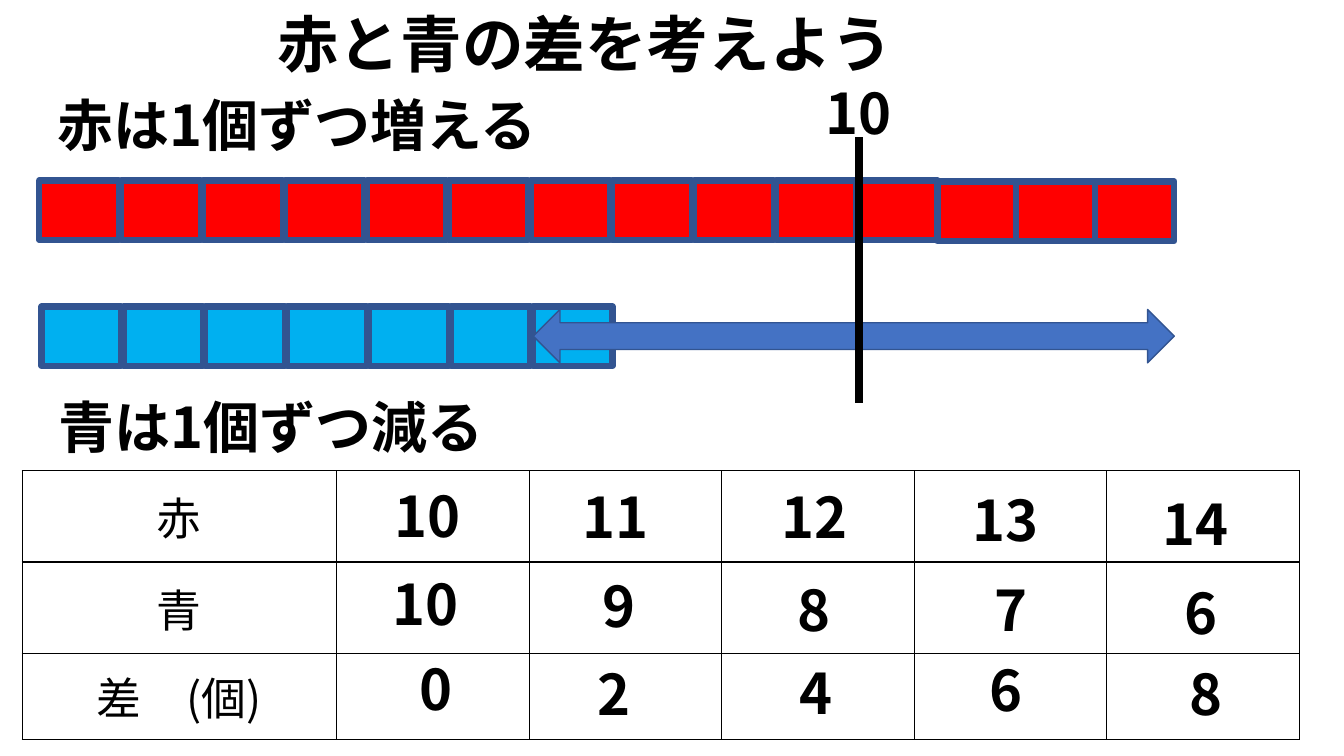
from dataclasses import dataclass

from lxml.etree import SubElement
from pptx import Presentation
from pptx.dml.color import RGBColor
from pptx.enum.shapes import MSO_CONNECTOR, MSO_SHAPE
from pptx.enum.text import MSO_ANCHOR, MSO_AUTO_SIZE, PP_ALIGN
from pptx.oxml.ns import qn
from pptx.slide import Slide
from pptx.text.text import TextFrame
from pptx.util import Emu, Inches, Pt


@dataclass(frozen=True)
class Theme:
    """Colours, font and type sizes of the slide."""
    font: str = "Noto Sans CJK JP"
    black: str = "000000"
    red: str = "FF0000"
    blue: str = "00B0F0"
    arrow: str = "4472C4"
    outline: str = "325491"
    title_size: int = 44
    label_size: int = 40
    table_size: int = 32
    tile_line: float = 4.5
    arrow_line: float = 1
    marker_line: float = 6
    table_line: float = 1


@dataclass(frozen=True)
class Box:
    """A frame in percent of the slide's width and height."""
    left: float
    top: float
    width: float
    height: float


@dataclass(frozen=True)
class Label:
    """Bold text with the place of its text box."""
    text: str
    left: float
    top: float
    width: float


@dataclass(frozen=True)
class TileRow:
    """A row of equally spaced tiles of one colour."""
    count: int
    left: float
    top: float
    pitch: float
    color: str


THEME = Theme()
WIDTH, HEIGHT = Inches(13.33), Inches(7.5)
TILE_WIDTH, TILE_HEIGHT = 5.93, 7.87
LABEL_HEIGHT = 10.27
TITLE = "赤と青の差を考えよう"
TITLE_BOX = Box(19.88, 0.13, 65.03, 11.2)
ARROW_BOX = Box(39.68, 40.93, 47.7, 7.07)
MARKER_LEFT, MARKER_TOP, MARKER_BOTTOM = 63.9, 18.13, 53.33
TABLE_LEFT, TABLE_TOP = 1.65, 62.27
TABLE_COLUMNS = [23.4] + [14.33] * 5
TABLE_ROWS = [12.08, 12.08, 11.38]
TABLE_HEADINGS = ["赤", "青", "差　(個)"]
TILE_ROWS = [
    TileRow(11, 2.93, 23.87, 6.09, THEME.red),
    TileRow(3, 69.75, 24, 5.85, THEME.red),
    TileRow(7, 3.1, 40.53, 6.09, THEME.blue),
]
LABELS = [
    Label("赤は1個ずつ増える", 3.53, 11.33, 44.7),
    Label("青は1個ずつ減る", 3.6, 51.2, 44.7),
    Label("10", 60.68, 9.73, 8.55),
    Label("10", 28.65, 63.07, 8.55),
    Label("11", 42.6, 63.2, 6.53),
    Label("12", 57.38, 63.2, 6.83),
    Label("13", 71.63, 63.6, 6.83),
    Label("14", 85.73, 64.13, 6.83),
    Label("10", 28.43, 74.67, 8.55),
    Label("9", 44.1, 74.93, 4.43),
    Label("8", 58.58, 75.47, 4.43),
    Label("7", 73.28, 75.47, 4.43),
    Label("6", 87.38, 75.87, 4.43),
    Label("0", 30.45, 85.87, 6.53),
    Label("2", 43.73, 86.53, 6.53),
    Label("4", 58.73, 86.4, 6.53),
    Label("6", 72.9, 86, 6.53),
    Label("8", 87.75, 86.53, 6.53),
]


def across(share: float) -> Emu:
    """Turn percent of the slide's width into a length."""
    return Emu(round(WIDTH * share / 100))


def down(share: float) -> Emu:
    """Turn percent of the slide's height into a length."""
    return Emu(round(HEIGHT * share / 100))


def frame(box: Box) -> tuple[Emu, Emu, Emu, Emu]:
    """Return left, top, width and height as lengths."""
    return across(box.left), down(box.top), across(box.width), down(box.height)


def write(text_frame: TextFrame, text: str, *, size: float, bold: bool = False,
          align: PP_ALIGN = PP_ALIGN.LEFT) -> None:
    """Fill a text frame with one formatted paragraph."""
    para = text_frame.paragraphs[0]
    para.alignment = align
    para.line_spacing = 1.0
    span = para.add_run()
    span.text = text
    span.font.name = THEME.font
    span.font.size = Pt(size)
    span.font.bold = bold
    span.font.color.rgb = RGBColor.from_string(THEME.black)
    SubElement(span.font._element, qn("a:ea"), typeface=THEME.font)


def fit(text_frame: TextFrame) -> None:
    """Wrap text from the top and let its box grow."""
    text_frame.word_wrap = True
    text_frame.auto_size = MSO_AUTO_SIZE.SHAPE_TO_FIT_TEXT
    text_frame.vertical_anchor = MSO_ANCHOR.TOP


def add_title(page: Slide) -> None:
    """Place and format the title placeholder."""
    title = page.shapes.title
    title.left, title.top, title.width, title.height = frame(TITLE_BOX)
    fit(title.text_frame)
    write(title.text_frame, TITLE, size=THEME.title_size, bold=True)


def add_label(page: Slide, label: Label) -> None:
    """Draw one bold label."""
    place = Box(label.left, label.top, label.width, LABEL_HEIGHT)
    text_frame = page.shapes.add_textbox(*frame(place)).text_frame
    fit(text_frame)
    write(text_frame, label.text, size=THEME.label_size, bold=True)


def add_block(page: Slide, preset: MSO_SHAPE, box: Box, color: str, line: float) -> None:
    """Draw a filled and outlined preset shape."""
    block = page.shapes.add_shape(preset, *frame(box))
    block.shadow.inherit = False
    block.fill.solid()
    block.fill.fore_color.rgb = RGBColor.from_string(color)
    block.line.color.rgb = RGBColor.from_string(THEME.outline)
    block.line.width = Pt(line)


def add_tiles(page: Slide, row: TileRow) -> None:
    """Draw one row of tiles."""
    for index in range(row.count):
        box = Box(row.left + index * row.pitch, row.top, TILE_WIDTH, TILE_HEIGHT)
        add_block(page, MSO_SHAPE.RECTANGLE, box, row.color, THEME.tile_line)


def add_marker(page: Slide) -> None:
    """Draw the vertical line at ten tiles."""
    marker = page.shapes.add_connector(
        MSO_CONNECTOR.STRAIGHT, across(MARKER_LEFT), down(MARKER_TOP),
        across(MARKER_LEFT), down(MARKER_BOTTOM))
    marker.line.color.rgb = RGBColor.from_string(THEME.black)
    marker.line.width = Pt(THEME.marker_line)
    SubElement(marker._element.spPr, qn("a:effectLst"))


def add_difference_table(page: Slide) -> None:
    """Draw the ruled table with its row headings."""
    box = Box(TABLE_LEFT, TABLE_TOP, sum(TABLE_COLUMNS), sum(TABLE_ROWS))
    table = page.shapes.add_table(len(TABLE_ROWS), len(TABLE_COLUMNS), *frame(box)).table
    table.first_row = table.horz_banding = False
    for column, share in zip(table.columns, TABLE_COLUMNS):
        column.width = across(share)
    for row, share, heading in zip(table.rows, TABLE_ROWS, TABLE_HEADINGS):
        row.height = down(share)
        for cell in row.cells:
            cell.vertical_anchor = MSO_ANCHOR.MIDDLE
            properties = cell._tc.get_or_add_tcPr()
            for side in ("a:lnL", "a:lnR", "a:lnT", "a:lnB"):
                border = SubElement(properties, qn(side), w=str(Pt(THEME.table_line)))
                SubElement(SubElement(border, qn("a:solidFill")), qn("a:srgbClr"), val=THEME.black)
            cell.fill.background()
        write(row.cells[0].text_frame, heading, size=THEME.table_size, align=PP_ALIGN.CENTER)


def main() -> None:
    """Build and save the slide."""
    deck = Presentation()
    deck.slide_width, deck.slide_height = WIDTH, HEIGHT
    page = deck.slides.add_slide(deck.slide_layouts.get_by_name("Title Only"))
    add_title(page)
    for row in TILE_ROWS:
        add_tiles(page, row)
    add_difference_table(page)
    add_block(page, MSO_SHAPE.LEFT_RIGHT_ARROW, ARROW_BOX, THEME.arrow, THEME.arrow_line)
    add_marker(page)
    for label in LABELS:
        add_label(page, label)
    deck.save("out.pptx")


if __name__ == "__main__":
    main()
